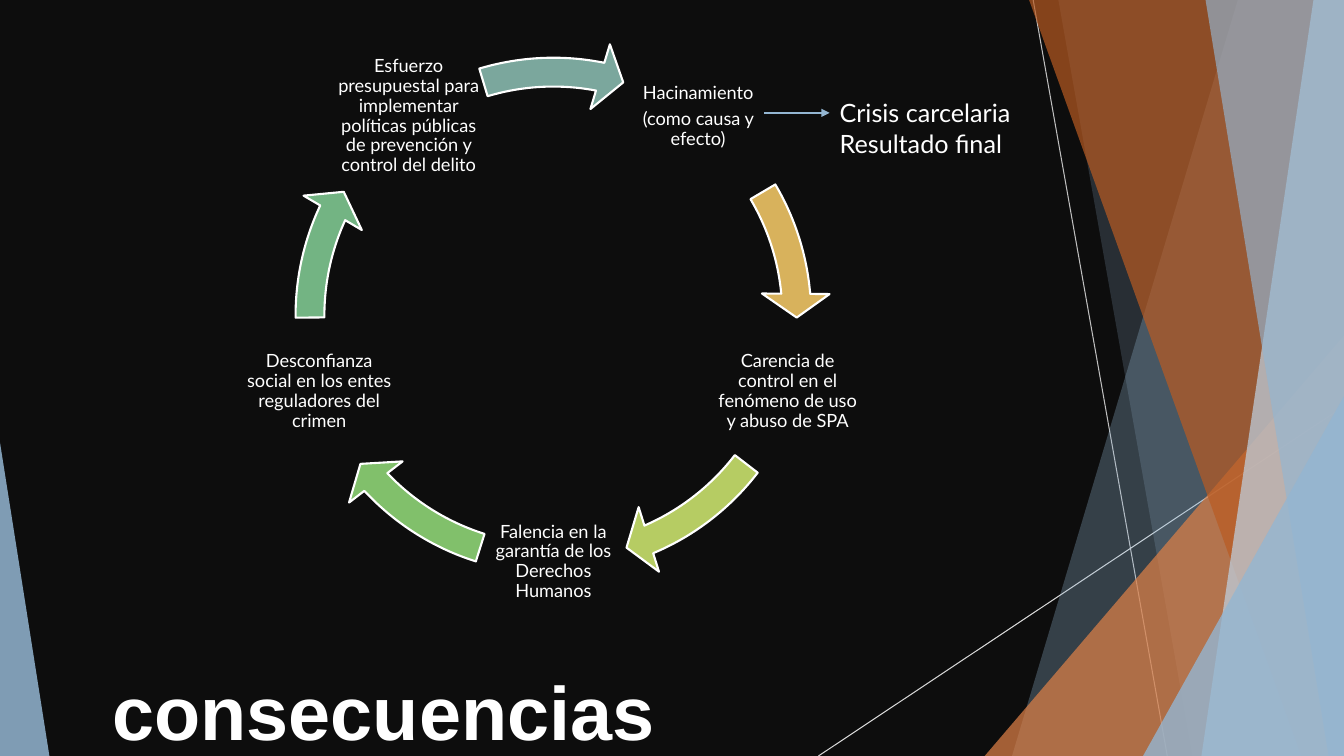
from math import cos, radians, sin

from lxml.etree import SubElement
from pptx import Presentation
from pptx.dml.color import RGBColor
from pptx.enum.shapes import MSO_CONNECTOR, MSO_SHAPE
from pptx.enum.text import MSO_ANCHOR, MSO_AUTO_SIZE, PP_ALIGN
from pptx.oxml.ns import qn
from pptx.util import Pt

STRAIGHT = MSO_CONNECTOR.STRAIGHT
CIRCULAR_ARROW = MSO_SHAPE.CIRCULAR_ARROW
CENTER, LEFT = PP_ALIGN.CENTER, PP_ALIGN.LEFT
TOP, MIDDLE, BOTTOM = MSO_ANCHOR.TOP, MSO_ANCHOR.MIDDLE, MSO_ANCHOR.BOTTOM
NO_FIT = MSO_AUTO_SIZE.NONE
W, H = 960, 540
WHITE = "FFFFFF"


def rgb(value):
    return RGBColor.from_string(value)


def write(sp, lines, frame, para, font):
    tf = sp.text_frame
    tf.text = "\n".join(lines)
    for name, value in frame.items():
        setattr(tf, name, value)
    for p in tf.paragraphs:
        for name, value in para.items():
            setattr(p, name, value)
        for name, value in font.items():
            setattr(p.runs[0].font, name, value)
        p.runs[0].font.color.rgb = rgb(WHITE)


prs = Presentation()
prs.slide_width, prs.slide_height = Pt(W), Pt(H)
s = prs.slides.add_slide(prs.slide_layouts[5])
s.background.fill.solid()
s.background.fill.fore_color.rgb = rgb("0D0D0D")

connectors = [
    (738, 0, 833.8, H, "BFBFBF", 0.75, False),
    (W, 290.2, 584.6, H, "D9D9D9", 0.75, False),
    (545.8, 80.6, 592.6, 80.6, "94B6D2", 1, True),
]
for x1, y1, x2, y2, color, width, arrow in connectors:
    line = s.shapes.add_connector(STRAIGHT, Pt(x1), Pt(y1), Pt(x2), Pt(y2))
    line.line.color.rgb = rgb(color)
    line.line.width = Pt(width)
    if arrow:
        SubElement(line.line._get_or_add_ln(), qn("a:tailEnd"), type="triangle")
    SubElement(line._element.spPr, qn("a:effectLst"))

facets = [
    ([(884.2, 0), (W, 0), (W, H), (722.9, H)], "94B6D2", 30),
    ([(756, 0), (W, 0), (W, H), (851.8, H)], "94B6D2", 20),
    ([(W, 239.8), (W, H), (703.4, H)], "DD8047", 72),
    ([(735.1, 0), (W, 0), (W, H), (929.5, H)], "B95B22", 70),
    ([(938.2, 0), (W, 0), (W, H), (858.2, H)], "BFD3E4", 70),
    ([(861.1, 0), (W, 0), (W, H), (949, H)], "94B6D2", 65),
    ([(W, 283), (W, H), (816.5, H)], "94B6D2", 80),
    ([(0, 316.1), (35.3, H), (0, H)], "94B6D2", 85),
]
for corners, color, opacity in facets:
    points = [(Pt(x), Pt(y)) for x, y in corners]
    builder = s.shapes.build_freeform(*points[0], scale=1.0)
    builder.add_line_segments(points[1:], close=True)
    sp = builder.convert_to_shape()
    sp.shadow.inherit = False
    sp.fill.solid()
    sp.fill.fore_color.rgb = rgb(color)
    sp.line.fill.background()
    clr = sp._element.spPr.xpath("a:solidFill/a:srgbClr")[0]
    SubElement(clr, qn("a:alpha"), val=str(opacity * 1000))

CX, CY, RADIUS = 395.3, 225.4, 175.9
LABEL, RING = 105.8, 396
cycle = [
    (["Hacinamiento", "(como causa y efecto)"], "D8B25C", 212.928, 197.666),
    (["Carencia de control en el fenómeno de uso y abuso de SPA"],
     "B6CC63", 40.143, 22.538),
    (["Falencia en la garantía de los Derechos Humanos"],
     "81C06B", 82.102, 64.497),
    (["Desconfianza social en los entes reguladores del crimen"],
     "73B483", 122.974, 107.712),
    (["Esfuerzo presupuestal para implementar políticas públicas de prevención "
      "y control del delito"], "7BA79D", 168.653, 151.987),
]
inset = Pt(1.4)
label_frame = {"word_wrap": True, "vertical_anchor": MIDDLE,
               "margin_left": inset, "margin_right": inset,
               "margin_top": inset, "margin_bottom": inset}
label_para = {"alignment": CENTER, "line_spacing": 0.9, "space_after": Pt(4.55)}
for i, (lines, color, end, start) in enumerate(cycle):
    angle = radians(72 * i - 54)
    x = CX + RADIUS * cos(angle) - LABEL / 2
    y = CY + RADIUS * sin(angle) - LABEL / 2
    label = s.shapes.add_textbox(Pt(x), Pt(y), Pt(LABEL), Pt(LABEL))
    write(label, lines, label_frame, label_para, {"name": "Lato", "size": Pt(13)})

    arrow = s.shapes.add_shape(CIRCULAR_ARROW, Pt(CX - RING / 2),
                               Pt(CY - RING / 2), Pt(RING), Pt(RING))
    for j, value in enumerate([0.052, 3.36, end, start, 0.061]):
        arrow.adjustments[j] = value
    arrow.shadow.inherit = False
    arrow.fill.solid()
    arrow.fill.fore_color.rgb = rgb(color)
    arrow.line.color.rgb = rgb(WHITE)
    arrow.line.width = Pt(1.5)

title = s.shapes.title
title.left, title.top, title.width, title.height = Pt(35.3), Pt(471.6), Pt(477.4), Pt(68.4)
write(title, ["consecuencias"],
      {"word_wrap": True, "auto_size": NO_FIT, "vertical_anchor": BOTTOM,
       "margin_bottom": Pt(0)},
      {"alignment": CENTER}, {"name": "Arial", "size": Pt(54), "bold": True})

result = s.shapes.add_textbox(Pt(592.6), Pt(66.2), Pt(150.5), Pt(51.1))
write(result, ["Crisis carcelaria", "Resultado final"],
      {"word_wrap": True, "vertical_anchor": TOP},
      {"alignment": LEFT}, {"name": "Lato", "size": Pt(18)})

prs.save("out.pptx")
